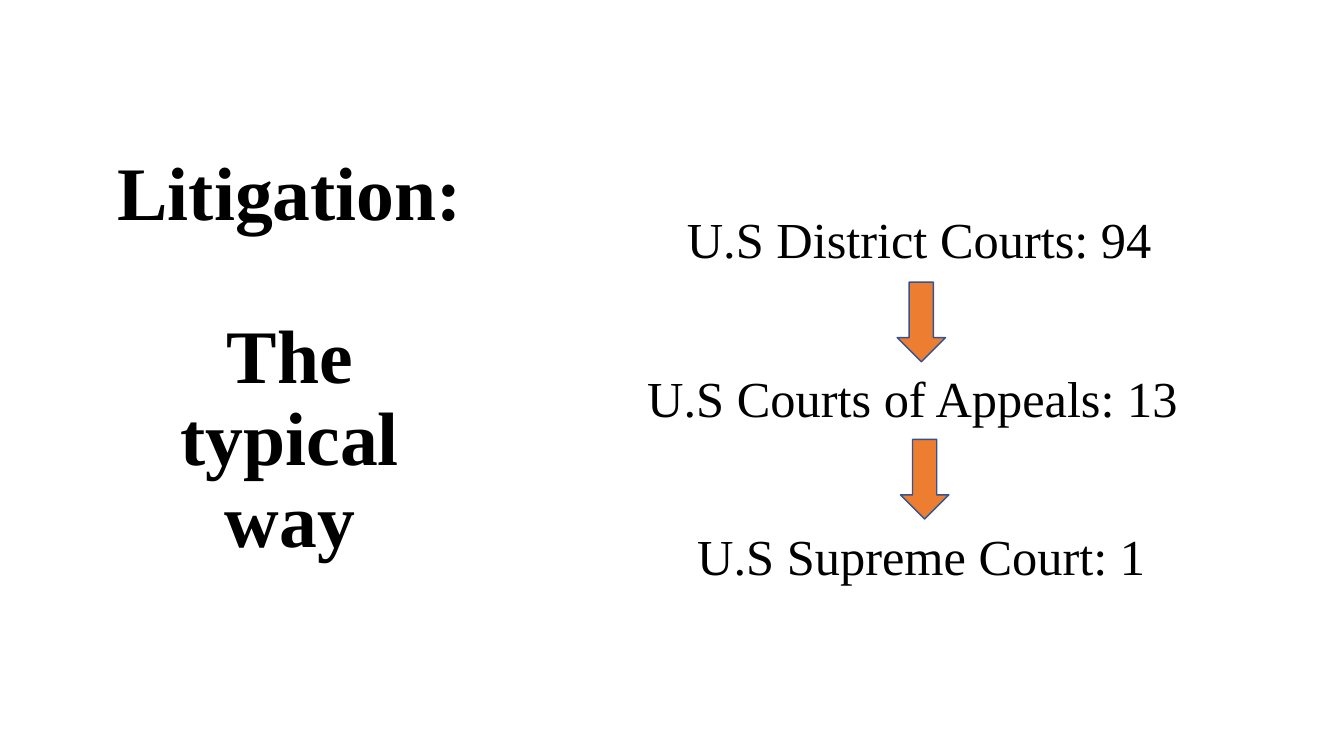
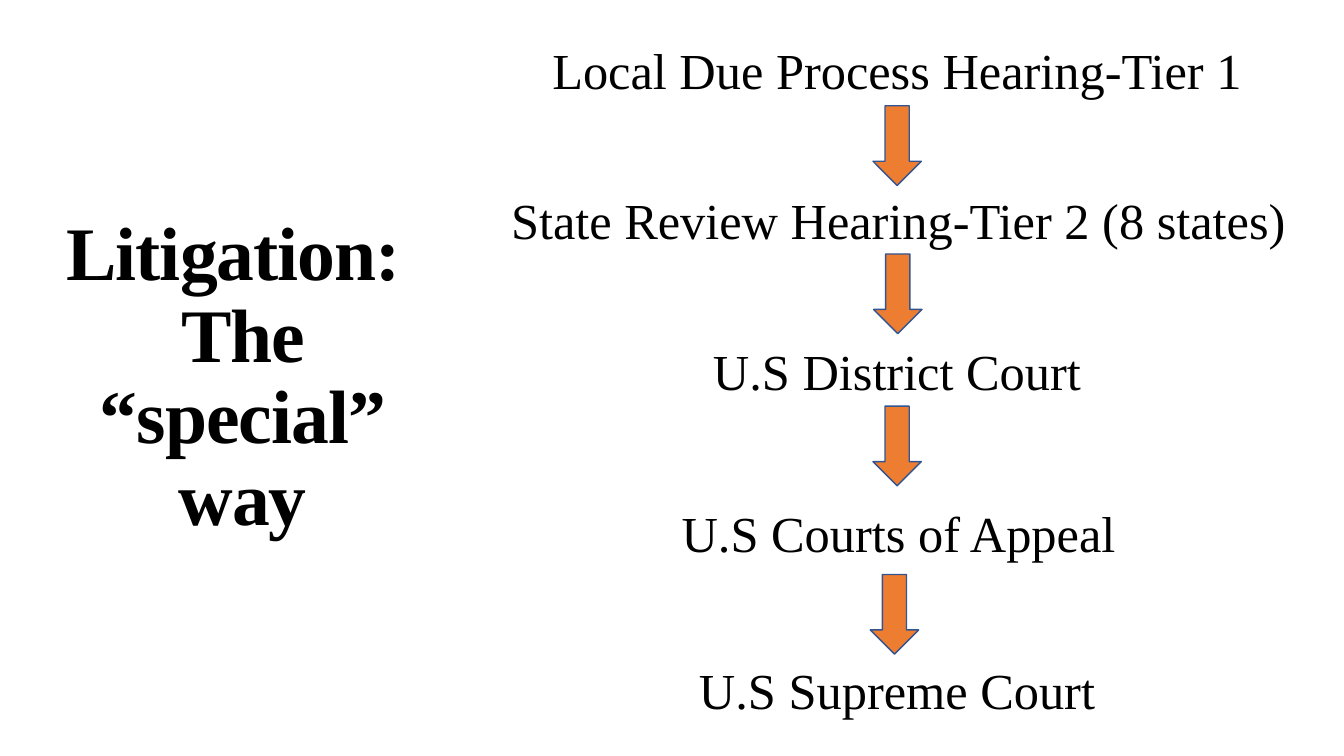
from dataclasses import dataclass
from typing import Optional

from pptx import Presentation
from pptx.dml.color import RGBColor
from pptx.enum.shapes import MSO_SHAPE
from pptx.enum.text import MSO_ANCHOR, PP_ALIGN
from pptx.util import Inches, Pt

SLIDE_WIDTH = Inches(13.33)
SLIDE_HEIGHT = Inches(7.5)


@dataclass(frozen=True)
class Theme:
    font: str = "Times New Roman"
    text: RGBColor = RGBColor(0x00, 0x00, 0x00)
    background: RGBColor = RGBColor(0xFF, 0xFF, 0xFF)
    arrow_fill: RGBColor = RGBColor(0xED, 0x7D, 0x31)
    arrow_line: RGBColor = RGBColor(0x32, 0x54, 0x91)
    title_size: int = 54
    step_size: int = 36


THEME = Theme()

# All lengths below are percentages of the slide's width or height
TITLE_WIDTH, TITLE_HEIGHT = 27.83, 66.53
STEP_HEIGHT = 9.47
ARROW_WIDTH, ARROW_HEIGHT = 3.6, 10.53
NARROW, MEDIUM, WIDE, WIDEST = 37.05, 41.85, 55.28, 59.93


@dataclass(frozen=True)
class Title:
    lines: tuple[str, str]
    left: float
    top: float
    gap: float = 0  # points between the two lines
    tracking: int = 0  # hundredths of a point


@dataclass(frozen=True)
class Arrow:
    center: float
    top: float


@dataclass(frozen=True)
class Step:
    text: str
    center: float
    top: float
    width: float
    arrow: Optional[Arrow] = None


@dataclass(frozen=True)
class Route:
    title: Title
    steps: tuple[Step, ...]


ROUTES = (
    Route(
        Title(("Litigation:", "The typical way"), 7.65, 14.27, gap=58.5),
        (
            Step("U.S District Courts: 94", 68.4, 26.93, NARROW, Arrow(68.55, 37.33)),
            Step("U.S Courts of Appeals: 13", 67.9, 47.87, MEDIUM, Arrow(68.8, 58.13)),
            Step("U.S Supreme Court: 1", 68.55, 68.8, NARROW),
        ),
    ),
    Route(
        Title(("Litigation: ", "The “special” way"), 4.13, 16.8, tracking=-70),
        (
            Step("Local Due Process Hearing-Tier 1", 66.75, 4.53, WIDE, Arrow(66.75, 14)),
            Step("State Review Hearing-Tier 2 (8 states)", 66.86, 24.4, WIDEST,
                 Arrow(66.8, 33.6)),
            Step("U.S District Court", 66.75, 44.4, NARROW, Arrow(66.75, 53.73)),
            Step("U.S Courts of Appeal", 66.86, 65.73, MEDIUM, Arrow(66.55, 76)),
            Step("U.S Supreme Court", 66.75, 86.53, NARROW),
        ),
    ),
)


def frame(left: float, top: float, width: float, height: float) -> tuple[int, ...]:
    """Turn percentages into a position and size on the slide."""
    return (
        round(SLIDE_WIDTH * left / 100),
        round(SLIDE_HEIGHT * top / 100),
        round(SLIDE_WIDTH * width / 100),
        round(SLIDE_HEIGHT * height / 100),
    )


def add_run(paragraph, text: str, size: int, bold: bool = False):
    paragraph.alignment = PP_ALIGN.CENTER
    run = paragraph.add_run()
    run.text = text
    run.font.name = THEME.font
    run.font.size = Pt(size)
    run.font.bold = bold
    run.font.color.rgb = THEME.text
    return run


def add_title(slide, title: Title) -> None:
    shape = slide.shapes.add_textbox(
        *frame(title.left, title.top, TITLE_WIDTH, TITLE_HEIGHT))
    text_frame = shape.text_frame
    text_frame.word_wrap = True
    text_frame.vertical_anchor = MSO_ANCHOR.MIDDLE
    first, second = text_frame.paragraphs[0], text_frame.add_paragraph()
    second.space_before = Pt(title.gap)
    for paragraph, line in zip((first, second), title.lines):
        paragraph.line_spacing = 0.9
        run = add_run(paragraph, line, THEME.title_size, bold=True)
        if title.tracking:
            run.font._element.set("spc", str(title.tracking))


def add_step(slide, step: Step) -> None:
    shape = slide.shapes.add_textbox(
        *frame(step.center - step.width / 2, step.top, step.width, STEP_HEIGHT))
    shape.text_frame.word_wrap = True
    add_run(shape.text_frame.paragraphs[0], step.text, THEME.step_size)


def add_arrow(slide, arrow: Arrow) -> None:
    shape = slide.shapes.add_shape(
        MSO_SHAPE.DOWN_ARROW,
        *frame(arrow.center - ARROW_WIDTH / 2, arrow.top, ARROW_WIDTH, ARROW_HEIGHT))
    shape.shadow.inherit = False
    shape.fill.solid()
    shape.fill.fore_color.rgb = THEME.arrow_fill
    shape.line.color.rgb = THEME.arrow_line
    shape.line.width = Pt(1)


def add_route(presentation, route: Route) -> None:
    slide = presentation.slides.add_slide(presentation.slide_layouts[6])
    slide.background.fill.solid()
    slide.background.fill.fore_color.rgb = THEME.background
    add_title(slide, route.title)
    for step in route.steps:
        add_step(slide, step)
        if step.arrow:
            add_arrow(slide, step.arrow)


def main() -> None:
    presentation = Presentation()
    presentation.slide_width = SLIDE_WIDTH
    presentation.slide_height = SLIDE_HEIGHT
    for route in ROUTES:
        add_route(presentation, route)
    presentation.save("out.pptx")


if __name__ == "__main__":
    main()
